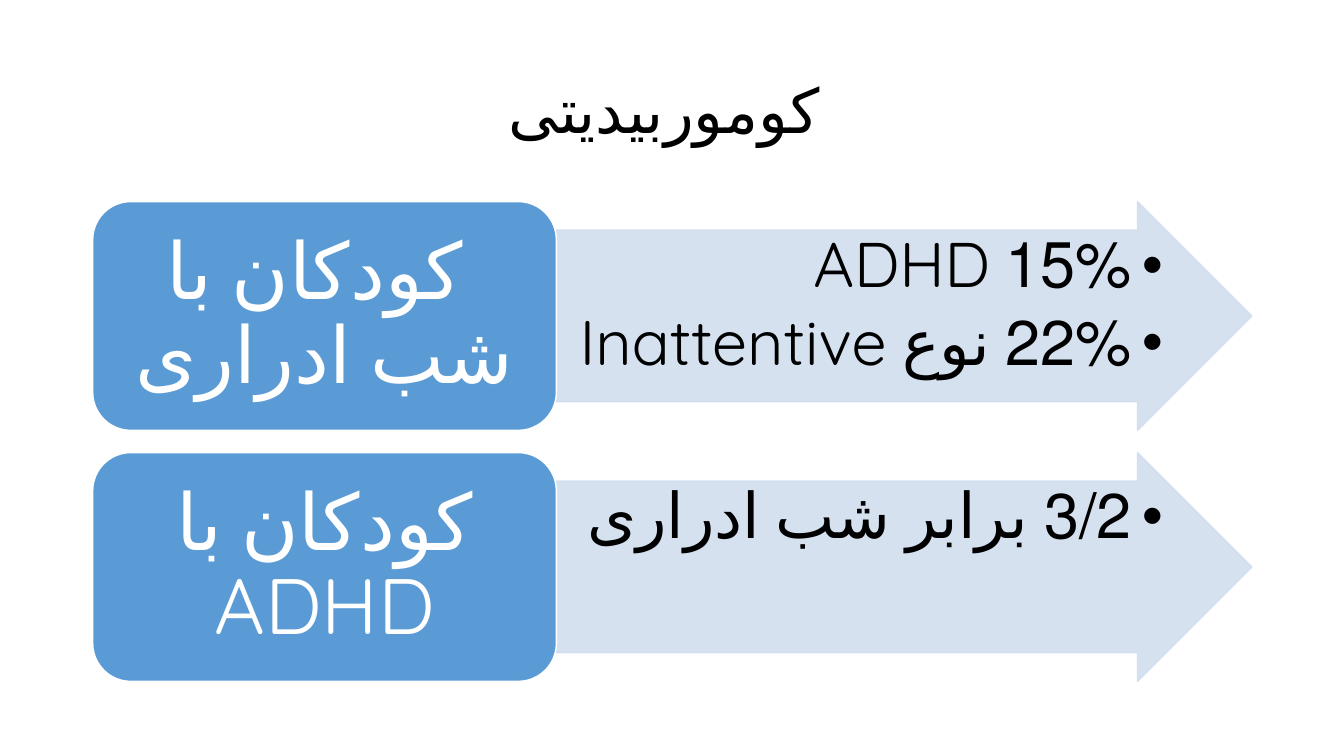
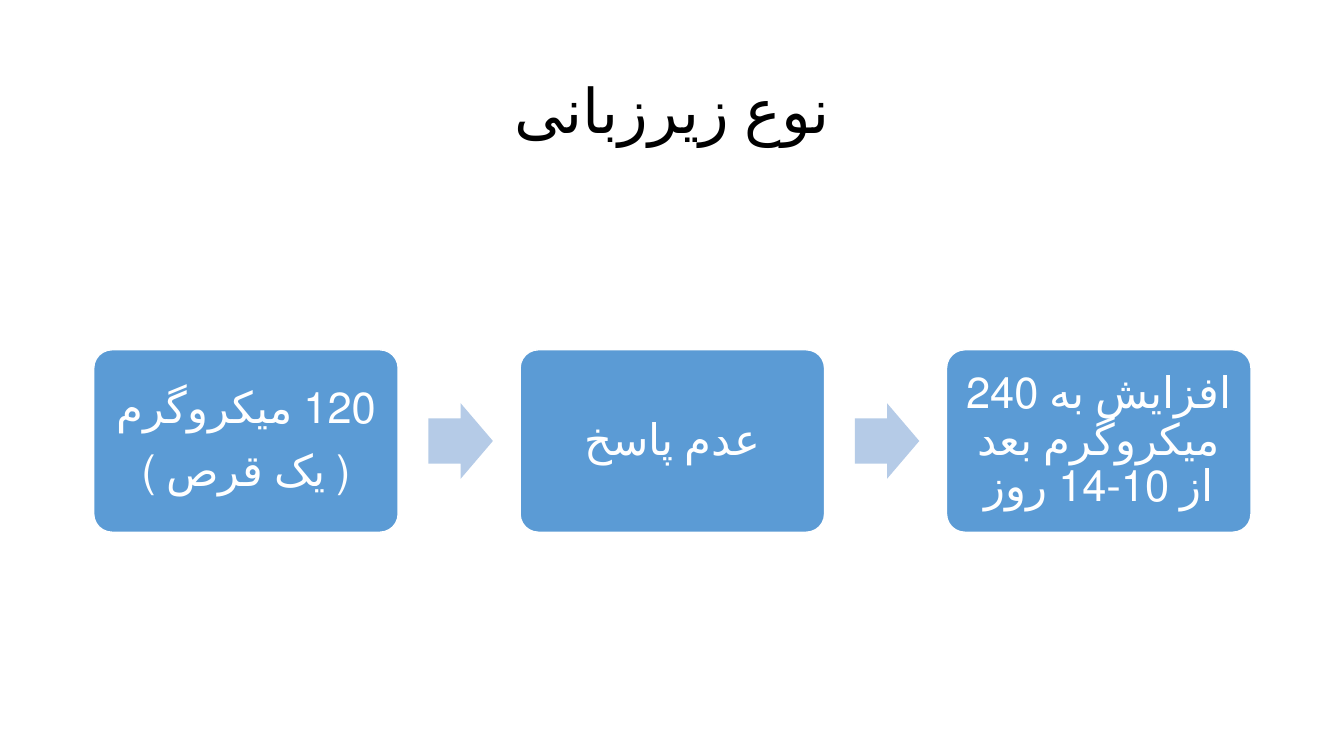
from lxml import etree
from pptx import Presentation
from pptx import util as u
from pptx.dml.color import RGBColor
from pptx.enum import lang, shapes, text
from pptx.oxml import ns

PX = 9144  # 100 px to the inch
FONT = "Quicksand"
COLORS = {"black": "000000", "white": "FFFFFF", "box": "5B9BD5",
          "band": "D2DEEF", "step": "B5CBE7"}
BOX_STYLE = {"alignment": text.PP_ALIGN.CENTER, "line_spacing": 0.9}
BULLET_STYLE = {"alignment": text.PP_ALIGN.RIGHT, "line_spacing": 0.9}
BULLET_INDENT = 31


def write(shape, lines, size, color, style, inset=None, space_after=0,
          rtl=True, bullet=False):
    """Fill a shape with formatted paragraphs."""
    frame = shape.text_frame
    frame.word_wrap = True
    if inset:
        for side, gap in zip(("left", "top", "right", "bottom"), inset):
            setattr(frame, f"margin_{side}", gap * PX)
    frame.vertical_anchor = (text.MSO_ANCHOR.TOP if bullet
                             else text.MSO_ANCHOR.MIDDLE)
    for number, line in enumerate(lines):
        para = frame.paragraphs[0] if number == 0 else frame.add_paragraph()
        for name, value in style.items():
            setattr(para, name, value)
        para.space_after = u.Pt(space_after)
        properties = para._p.get_or_add_pPr()
        if rtl:
            properties.set("rtl", "1")
        if bullet:
            properties.set("marL", str(BULLET_INDENT * PX))
            properties.set("indent", str(-BULLET_INDENT * PX))
            etree.SubElement(properties, ns.qn("a:buFont"), typeface=FONT)
            etree.SubElement(properties, ns.qn("a:buChar"), char="•")
        span = para.add_run()
        span.text = line
        for name, value in {"name": FONT, "size": u.Pt(size),
                            "language_id": lang.MSO_LANGUAGE_ID.FARSI}.items():
            setattr(span.font, name, value)
        span.font.color.rgb = RGBColor.from_string(COLORS[color])


def add_block(page, kind, place, fill, line=None, adjust=(), alpha=None):
    """Add a flat preset shape."""
    shape = page.shapes.add_shape(kind, *(value * PX for value in place))
    shape.shadow.inherit = False
    for number, value in enumerate(adjust):
        shape.adjustments[number] = value
    shape.fill.solid()
    shape.fill.fore_color.rgb = RGBColor.from_string(COLORS[fill])
    if line:
        shape.line.color.rgb = RGBColor.from_string(COLORS[line])
        shape.line.width = u.Pt(1)
    else:
        shape.line.fill.background()
    if alpha:
        for color in shape._element.spPr.iter(ns.qn("a:srgbClr")):
            etree.SubElement(color, ns.qn("a:alpha"), val=str(alpha * 1000))
    return shape


ARROW = shapes.MSO_SHAPE.RIGHT_ARROW
ROUNDED = shapes.MSO_SHAPE.ROUNDED_RECTANGLE

deck = Presentation()
deck.slide_width, deck.slide_height = u.Inches(13.333), u.Inches(7.5)

# Pages and titles
pages = []
for heading, rtl in (("کوموربیدیتی ", False), ("نوع زیرزبانی", True)):
    page = deck.slides.add_slide(deck.slide_layouts[5])
    title = page.shapes.title
    title.left, title.top, title.width, title.height = (
        value * PX for value in (92, 40, 1150, 145))
    write(title, [heading], 44, "black", BOX_STYLE, rtl=rtl)
    pages.append(page)
comorbidity_page, sublingual_page = pages

# Comorbidity: a group label and an arrow of findings in each row
ROW_TOP, ROW_HEIGHT, ROW_STEP = 200, 227, 249
LABEL_LEFT, LABEL_WIDTH, BAND_WIDTH = 92, 460, 690
rows = [
    (" کودکان با شب ادراری", ["15% ADHD ", "22% نوع Inattentive "]),
    ("کودکان با ADHD", ["3/2 برابر شب ادراری"]),
]
for number, (label, findings) in enumerate(rows):
    top = ROW_TOP + number * ROW_STEP
    band = add_block(comorbidity_page, ARROW,
                     (LABEL_LEFT + LABEL_WIDTH, top, BAND_WIDTH, ROW_HEIGHT),
                     "band", "band", (0.75, 0.5), alpha=90)
    write(band, findings, 45, "black", BULLET_STYLE, (3, 3, 3, 3), 7,
          bullet=True)
    box = add_block(comorbidity_page, ROUNDED,
                    (LABEL_LEFT, top, LABEL_WIDTH, ROW_HEIGHT), "box", "white")
    write(box, [label], 56, "white", BOX_STYLE, (23, 12, 23, 12), 20)

# Sublingual form: three steps joined by arrows
STEP_LEFT, STEP_TOP, STEP_WIDTH, STEP_HEIGHT, STEP_PITCH = 93, 347, 302, 181, 423
ARROW_WIDTH, ARROW_HEIGHT, ARROW_GAP = 64, 75, 30
steps = [
    ["120 میکروگرم", "( یک قرص )"],
    ["عدم پاسخ"],
    ["افزایش به 240 میکروگرم بعد از 10-14 روز"],
]
for number, lines in enumerate(steps):
    left = STEP_LEFT + number * STEP_PITCH
    box = add_block(sublingual_page, ROUNDED,
                    (left, STEP_TOP, STEP_WIDTH, STEP_HEIGHT),
                    "box", "white", (0.1,))
    write(box, lines, 31, "white", BOX_STYLE, (13, 13, 13, 13), 11)
    if number < len(steps) - 1:
        arrow_top = STEP_TOP + (STEP_HEIGHT - ARROW_HEIGHT) // 2
        add_block(sublingual_page, ARROW,
                  (left + STEP_WIDTH + ARROW_GAP, arrow_top,
                   ARROW_WIDTH, ARROW_HEIGHT), "step", adjust=(0.6, 0.5))

deck.save("out.pptx")
